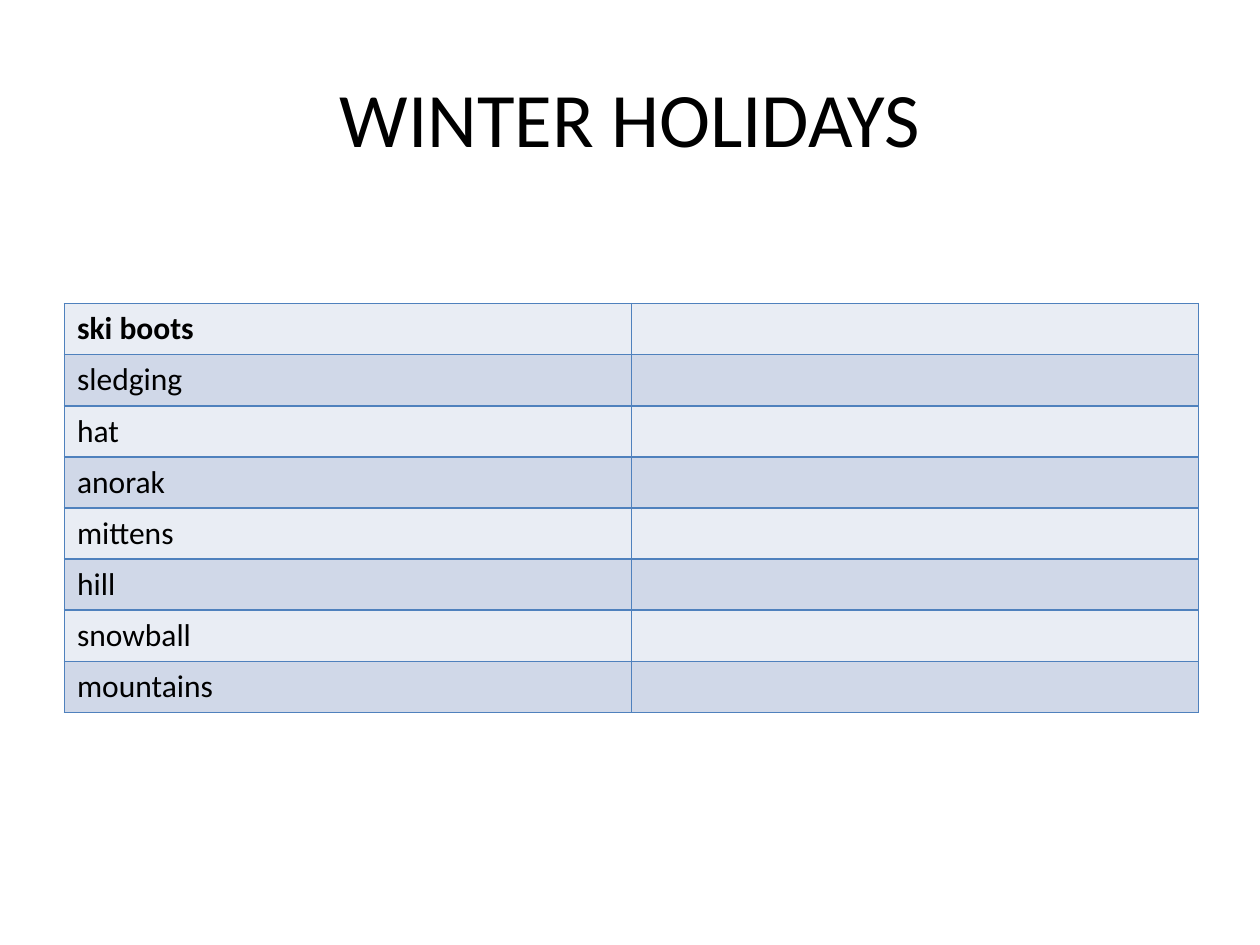
from pptx import Presentation
from pptx.dml.color import RGBColor
from pptx.enum.text import MSO_ANCHOR, PP_ALIGN
from pptx.oxml.ns import qn
from pptx.util import Cm, Pt
from lxml.etree import SubElement


def colour(hex_code):
    return RGBColor.from_string(hex_code)


class VocabularySlide:
    font = "Calibri"
    ink = "000000"
    border = "4F81BD"
    bands = ("E9EDF4", "D0D8E8")

    def __init__(self, deck):
        self.slide = deck.slides.add_slide(deck.slide_layouts[6])

    def format_text(self, paragraph, size, bold=False):
        for run in paragraph.runs:
            run.font.name = self.font
            run.font.size = Pt(size)
            run.font.bold = bold
            run.font.color.rgb = colour(self.ink)

    def add_title(self, wording, left, top, width, height):
        title = self.slide.shapes.add_textbox(Cm(left), Cm(top), Cm(width), Cm(height))
        frame = title.text_frame
        frame.word_wrap = True
        frame.vertical_anchor = MSO_ANCHOR.MIDDLE
        frame.text = wording
        heading = frame.paragraphs[0]
        heading.alignment = PP_ALIGN.CENTER
        self.format_text(heading, 44)

    def add_borders(self, cell):
        properties = cell._tc.get_or_add_tcPr()
        for side in ("a:lnL", "a:lnR", "a:lnT", "a:lnB"):
            line = SubElement(properties, qn(side), w=str(Pt(1)))
            fill = SubElement(line, qn("a:solidFill"))
            SubElement(fill, qn("a:srgbClr"), val=self.border)

    def add_word_table(self, words, left, top, column_width, row_height):
        table = self.slide.shapes.add_table(
            len(words), 2, Cm(left), Cm(top),
            Cm(2 * column_width), Cm(len(words) * row_height),
        ).table
        table.first_row = False
        table.horz_banding = False
        for column in table.columns:
            column.width = Cm(column_width)
        for index, word in enumerate(words):
            row = table.rows[index]
            row.height = Cm(row_height)
            for cell in row.cells:
                self.add_borders(cell)
                cell.fill.solid()
                cell.fill.fore_color.rgb = colour(self.bands[index % 2])
            entry = row.cells[0].text_frame.paragraphs[0]
            entry.text = word
            self.format_text(entry, 18, bold=index == 0)


def main():
    deck = Presentation()
    deck.slide_width = Cm(25.4)
    deck.slide_height = Cm(19.05)
    vocabulary = VocabularySlide(deck)
    vocabulary.add_title("WINTER HOLIDAYS", 1.27, 0.76, 22.86, 3.18)
    winter_words = [
        "ski boots", "sledging", "hat", "anorak",
        "mittens", "hill", "snowball", "mountains",
    ]
    vocabulary.add_word_table(winter_words, 1.3, 6.12, 11.43, 1.03)
    deck.save("out.pptx")


if __name__ == "__main__":
    main()
